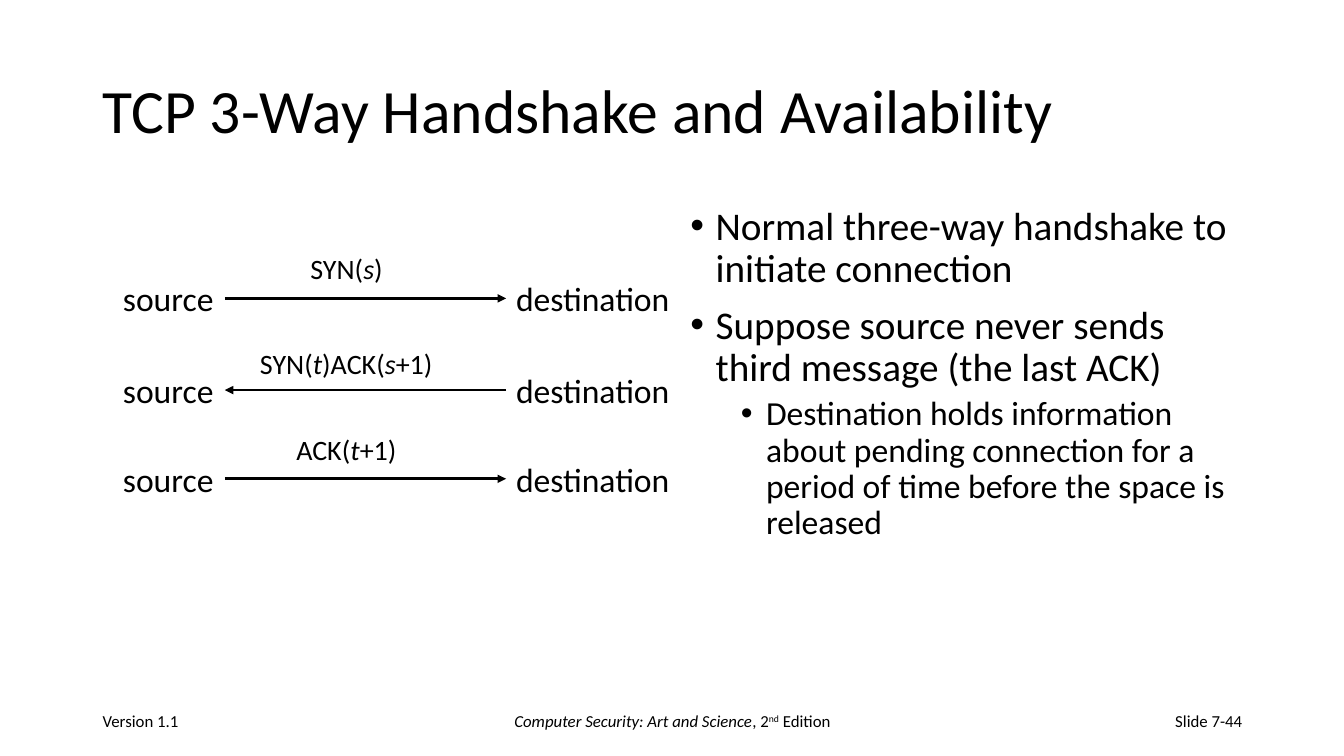
import pptx
import pptx.dml.color
import pptx.enum.shapes
import pptx.enum.text
import pptx.oxml.ns
import pptx.util
from lxml import etree

Inches = pptx.util.Inches
Pt = pptx.util.Pt
qn = pptx.oxml.ns.qn
ALIGN = pptx.enum.text.PP_ALIGN
ANCHOR = pptx.enum.text.MSO_ANCHOR
COLORS = {"ink": "000000", "paper": "FFFFFF"}
INK = pptx.dml.color.RGBColor.from_string(COLORS["ink"])

deck = pptx.Presentation()
deck.slide_width, deck.slide_height = Inches(13.33), Inches(7.5)
page = deck.slides.add_slide(deck.slide_layouts[6])
page.background.fill.solid()
page.background.fill.fore_color.rgb = pptx.dml.color.RGBColor.from_string(COLORS["paper"])


def style_paragraph(para, spans, size, align=ALIGN.LEFT):
    """Fill a paragraph with (text, style) spans; style is "", "italic" or "super"."""
    para.alignment = align
    para.font.name = "Calibri"
    para.font.size = Pt(size)
    para.font.color.rgb = INK
    for text, style in spans:
        span = para.add_run()
        span.text = text
        if style == "italic":
            span.font.italic = True
        elif style == "super":
            span._r.get_or_add_rPr().set("baseline", "30000")


def add_text(left, top, width, height, spans, size,
             align=ALIGN.LEFT, anchor=ANCHOR.TOP, wrap=True):
    box = page.shapes.add_textbox(Inches(left), Inches(top), Inches(width), Inches(height))
    box.text_frame.word_wrap = wrap
    box.text_frame.vertical_anchor = anchor
    style_paragraph(box.text_frame.paragraphs[0], spans, size, align)
    return box


# Title
title = add_text(0.92, 0.4, 11.5, 1.45, [("TCP 3-Way Handshake and Availability", "")],
                 44, anchor=ANCHOR.MIDDLE)
title.text_frame.paragraphs[0].line_spacing = 0.9

# Bullets: text, size, indent, space before
bullets = [
    ("Normal three-way handshake to initiate connection", 28, 0.25, 0),
    ("Suppose source never sends third message (the last ACK)", 28, 0.25, 10),
    ("Destination holds information about pending connection for a period of time "
     "before the space is released", 24, 0.75, 5),
]
body = page.shapes.add_textbox(Inches(6.75), Inches(2), Inches(5.67), Inches(4.76))
body.text_frame.word_wrap = True
for number, (text, size, indent, before) in enumerate(bullets):
    para = body.text_frame.add_paragraph() if number else body.text_frame.paragraphs[0]
    para.line_spacing = 0.9
    para.space_before = Pt(before)
    properties = para._p.get_or_add_pPr()
    properties.set("marL", str(Inches(indent)))
    properties.set("indent", str(Inches(-0.25)))
    etree.SubElement(properties, qn("a:buFont")).set("typeface", "Arial")
    etree.SubElement(properties, qn("a:buChar")).set("char", "•")
    style_paragraph(para, [(text, "")], size)

# Footer
book = [("Computer Security: Art and Science", "italic"), (", 2", ""),
        ("nd", "super"), (" Edition", "")]
for left, width, spans, align in [
    (0.92, 3, [("Version 1.1", "")], ALIGN.LEFT),
    (4.42, 4.5, book, ALIGN.CENTER),
    (9.42, 3, [("Slide 7-44", "")], ALIGN.RIGHT),
]:
    add_text(left, 6.95, width, 0.4, spans, 12, align, ANCHOR.MIDDLE)

# Handshake messages: row top, label left, top and width, label, arrow start and end
source_edge, destination_edge = 2.23, 5.02
messages = [
    (2.71, 2.98, 2.45, 0.93, [("SYN(", ""), ("s", "italic"), (")", "")],
     source_edge, destination_edge),
    (3.62, 2.48, 3.39, 1.93, [("SYN(", ""), ("t", "italic"), (")ACK(", ""),
                              ("s", "italic"), ("+1)", "")],
     destination_edge, source_edge),
    (4.5, 2.84, 4.24, 1.21, [("ACK(", ""), ("t", "italic"), ("+1)", "")],
     source_edge, destination_edge),
]
for top, label_left, label_top, label_width, label, start, end in messages:
    add_text(1.12, top, 1.11, 0.5, [("source", "")], 24, wrap=False)
    add_text(destination_edge, top, 1.74, 0.5, [("destination", "")], 24, wrap=False)
    arrow = page.shapes.add_connector(
        pptx.enum.shapes.MSO_CONNECTOR.STRAIGHT,
        Inches(start), Inches(top + 0.25), Inches(end), Inches(top + 0.25))
    arrow.line.color.rgb = INK
    arrow.line.width = Pt(2)
    etree.SubElement(arrow.line._get_or_add_ln(), qn("a:tailEnd")).set("type", "triangle")
    etree.SubElement(arrow._element.spPr, qn("a:effectLst"))
    add_text(label_left, label_top, label_width, 0.44, label, 20, wrap=False)

deck.save("out.pptx")
